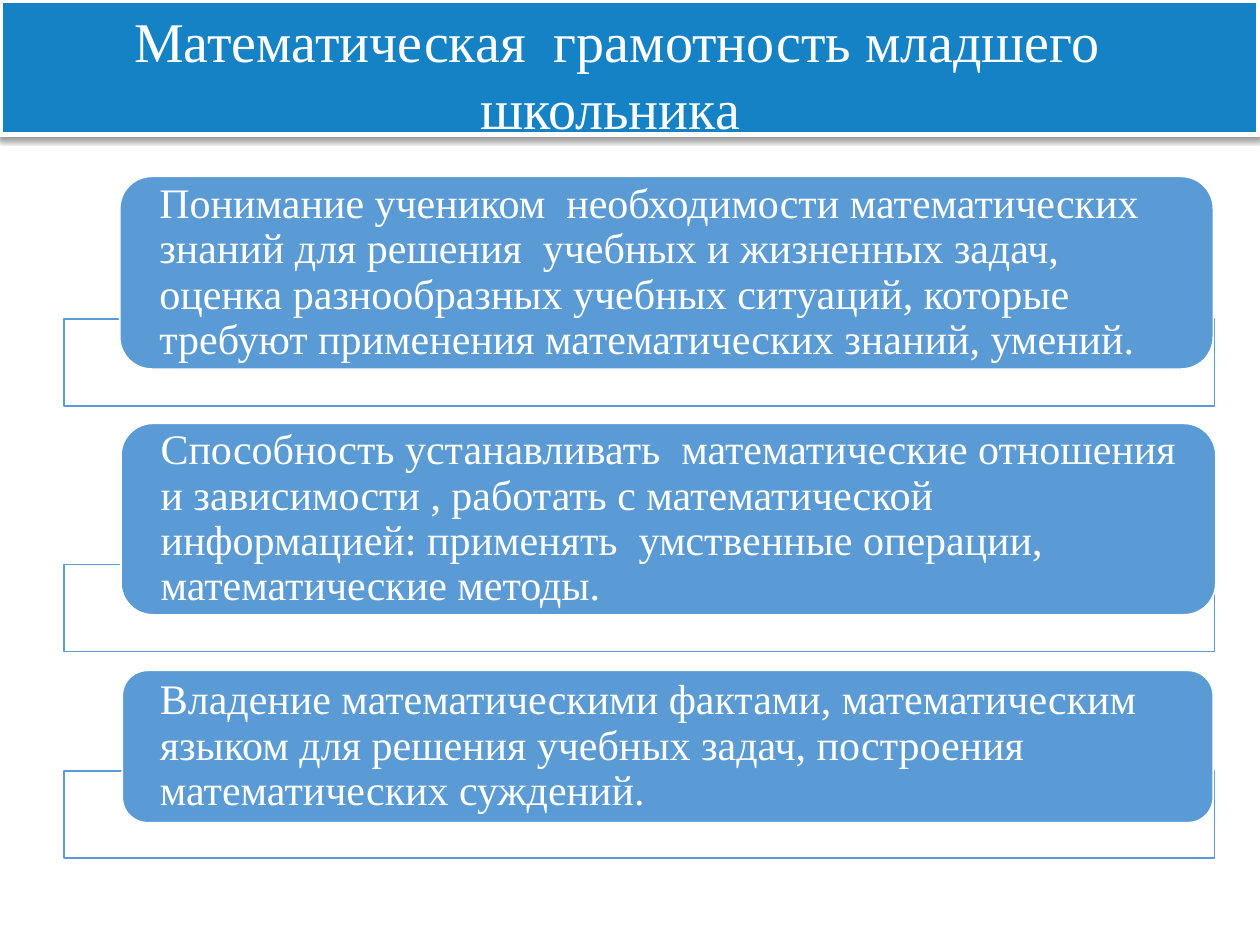
import dataclasses

import pptx
import pptx.dml.color
import pptx.enum.shapes
import pptx.enum.text
import pptx.oxml
import pptx.oxml.ns
import pptx.util
from pptx.util import Inches, Pt

KINDS = pptx.enum.shapes.MSO_SHAPE
ANCHORS = pptx.enum.text.MSO_ANCHOR
ALIGNS = pptx.enum.text.PP_ALIGN


@dataclasses.dataclass(frozen=True)
class Theme:
    """Colours, font and type sizes of the slide."""
    banner: str = "1682C6"
    accent: str = "5B9BD5"
    light: str = "FFFFFF"
    shadow: str = "000000"
    font: str = "Times New Roman"
    title_size: int = 32
    body_size: int = 24


THEME = Theme()
TITLE = "Математическая  грамотность младшего школьника "
STATEMENTS = [
    ((0.95, 1.4, 8.68, 1.53), 2.53,
     "Понимание учеником  необходимости математических знаний для решения  "
     "учебных и жизненных задач, оценка разнообразных учебных ситуаций, "
     "которые требуют применения математических знаний, умений."),
    ((0.96, 3.36, 8.69, 1.52), 4.48,
     "Способность устанавливать  математические отношения и зависимости , "
     "работать с математической информацией: применять  умственные операции,  "
     "математические методы."),
    ((0.97, 5.32, 8.66, 1.21), 6.12,
     "Владение математическими фактами, математическим языком для решения "
     "учебных задач, построения математических суждений."),
]


def rgb(code):
    """Turn a hex code into a colour."""
    return pptx.dml.color.RGBColor.from_string(code)


def apply(target, formats):
    """Set each named attribute of the target."""
    for name, value in formats.items():
        setattr(target, name, value)


def add_panel(shapes, kind, place, fill, line, weight):
    """Add a filled and outlined shape without a shadow."""
    panel = shapes.add_shape(kind, *map(Inches, place))
    panel.shadow.inherit = False
    panel.fill.solid()
    panel.fill.fore_color.rgb = rgb(fill)
    panel.line.color.rgb = rgb(line)
    panel.line.width = Pt(weight)
    return panel


def write_text(box, text, size, frame_formats, para_formats):
    """Write one paragraph of light text into a box."""
    frame = box.text_frame
    apply(frame, {"word_wrap": True, **frame_formats})
    para = frame.paragraphs[0]
    apply(para, para_formats)
    span = para.add_run()
    span.text = text
    apply(span.font, {"name": THEME.font, "size": Pt(size)})
    span.font.color.rgb = rgb(THEME.light)


def add_banner(page):
    """Add the title band with its soft shadow and the title."""
    band = add_panel(page.shapes, KINDS.RECTANGLE, (0, 0, 9.99, 1.07),
                     THEME.banner, THEME.light, 3)
    effects = band._element.spPr.find(pptx.oxml.ns.qn("a:effectLst"))
    effects.append(pptx.oxml.parse_xml(
        f'<a:outerShdw {pptx.oxml.ns.nsdecls("a")} blurRad="{Pt(3)}" '
        f'dist="{Pt(1.6)}" dir="5400000" rotWithShape="0">'
        f'<a:srgbClr val="{THEME.shadow}"><a:alpha val="38000"/></a:srgbClr>'
        '</a:outerShdw>'))
    box = page.shapes.add_textbox(0, 0, Inches(9.8), Inches(1.18))
    write_text(box, TITLE, THEME.title_size, {}, {"alignment": ALIGNS.CENTER})


def add_statement(shapes, place, frame_top, text):
    """Add an outlined frame with a rounded statement over it."""
    frame = add_panel(shapes, KINDS.RECTANGLE, (0.51, frame_top, 9.13, 0.69),
                      THEME.light, THEME.accent, 1)
    color = frame._element.spPr.find(
        "/".join(map(pptx.oxml.ns.qn, ("a:solidFill", "a:srgbClr"))))
    color.append(pptx.oxml.parse_xml(
        f'<a:alpha {pptx.oxml.ns.nsdecls("a")} val="90000"/>'))
    card = add_panel(shapes, KINDS.ROUNDED_RECTANGLE, place,
                     THEME.accent, THEME.light, 1)
    write_text(card, text, THEME.body_size,
               {"vertical_anchor": ANCHORS.MIDDLE,
                "margin_left": Inches(0.24), "margin_right": Inches(0.24),
                "margin_top": 0, "margin_bottom": 0},
               {"alignment": ALIGNS.LEFT, "line_spacing": 0.9})


def main():
    """Build the slide and save it."""
    deck = pptx.Presentation()
    apply(deck, {"slide_width": Inches(10), "slide_height": Inches(7.5)})
    page = deck.slides.add_slide(deck.slide_layouts[6])
    add_banner(page)
    group = page.shapes.add_group_shape()
    for place, frame_top, text in STATEMENTS:
        add_statement(group.shapes, place, frame_top, text)
    deck.save("out.pptx")


if __name__ == "__main__":
    main()
